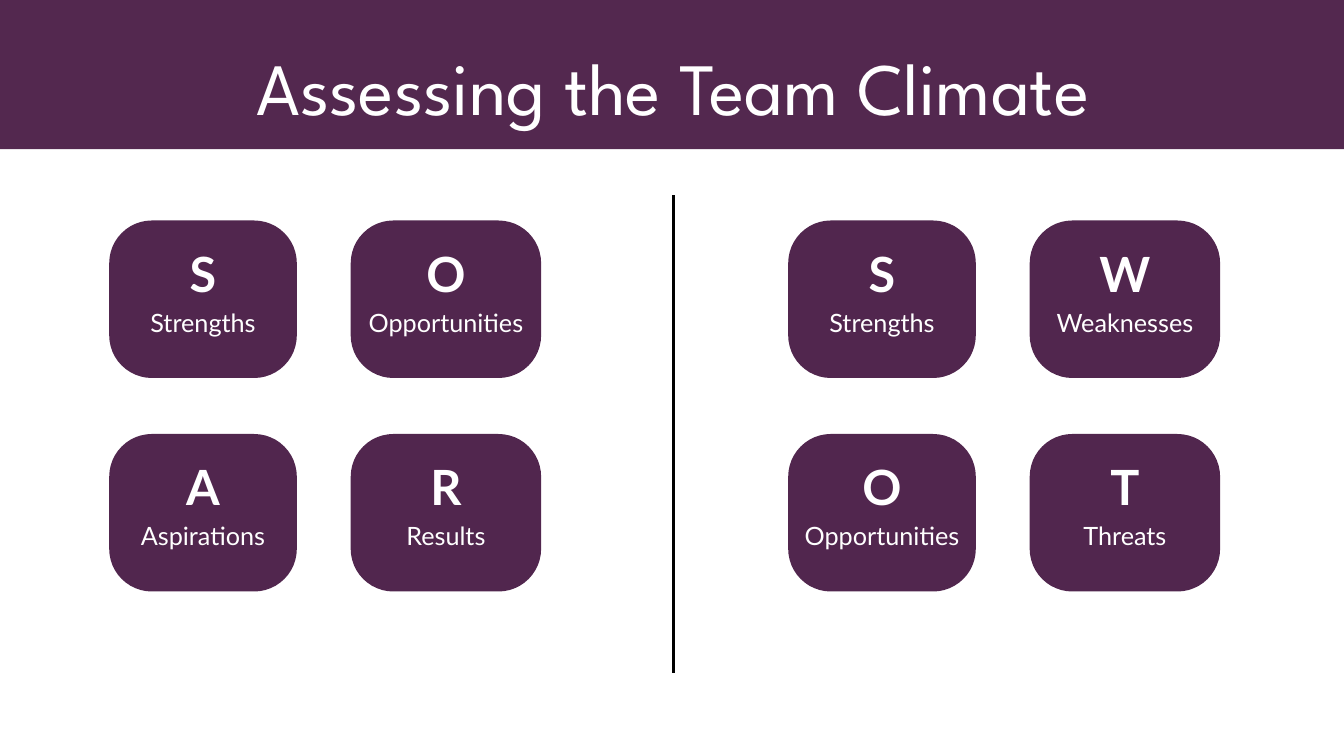
from itertools import product

from lxml.etree import SubElement
from pptx import Presentation
from pptx.dml.color import RGBColor
from pptx.enum.shapes import MSO_CONNECTOR, MSO_SHAPE
from pptx.enum.text import MSO_ANCHOR, PP_ALIGN
from pptx.oxml.ns import qn
from pptx.util import Pt

EMU_PER_PX = 9525
BAND_PURPLE = RGBColor(0x53, 0x28, 0x4F)
CARD_PURPLE = RGBColor(0x51, 0x26, 0x4E)
WHITE = RGBColor(0xFF, 0xFF, 0xFF)
BLACK = RGBColor(0x00, 0x00, 0x00)

TITLE = {"name": "League Spartan", "size": Pt(79), "bold": False}
LETTER = {"name": "Lato", "size": Pt(52), "bold": True}
LABEL = {"name": "Lato", "size": Pt(27), "bold": False}

MODEL_LEFTS = (156, 1126)
COLUMNS = ((0, 268), (345, 272))  # offset from the model's left, width
ROW_TOPS = (315, 620)
CARD_HEIGHT = 225
CORNER_RADIUS = 61
MODELS = (
    ("Strengths", "Opportunities", "Aspirations", "Results"),
    ("Strengths", "Weaknesses", "Opportunities", "Threats"),
)


def px(*lengths):
    return [length * EMU_PER_PX for length in lengths]


class ClimateSlide:
    """Holds the current slide and draws its elements in one style."""

    def __init__(self, slide):
        self.slide = slide

    def block(self, preset, box, colour):
        block = self.slide.shapes.add_shape(preset, *px(*box))
        block.shadow.inherit = False
        block.fill.solid()
        block.fill.fore_color.rgb = colour
        block.line.fill.background()
        return block

    def fill_text(self, frame, lines, frame_format):
        """Fill a text frame with (text, font format, line height in points)."""
        margins = {f"margin_{side}": 0 for side in ("left", "top", "right", "bottom")}
        for key, value in {**margins, **frame_format}.items():
            setattr(frame, key, value)
        for index, (text, font_format, line_height) in enumerate(lines):
            paragraph = frame.add_paragraph() if index else frame.paragraphs[0]
            paragraph.alignment = PP_ALIGN.CENTER
            paragraph.line_spacing = Pt(line_height)
            run = paragraph.add_run()
            run.text = text
            for key, value in font_format.items():
                setattr(run.font, key, value)
            run.font.color.rgb = WHITE

    def title(self, text, box):
        heading = self.slide.shapes.add_textbox(*px(*box))
        self.fill_text(heading.text_frame, [(text, TITLE, 94.8)], {"word_wrap": True})

    def card(self, label, box):
        card = self.block(MSO_SHAPE.ROUNDED_RECTANGLE, box, CARD_PURPLE)
        card.adjustments[0] = CORNER_RADIUS / CARD_HEIGHT
        lines = [(label[0], LETTER, 72.8), (label, LABEL, 37.8)]
        [raised] = px(39)
        self.fill_text(card.text_frame, lines, {
            "margin_bottom": raised,
            "vertical_anchor": MSO_ANCHOR.MIDDLE,
            "word_wrap": False,
        })

    def divider(self, x, top, bottom):
        divider = self.slide.shapes.add_connector(
            MSO_CONNECTOR.STRAIGHT, *px(x, bottom, x, top))
        divider.line.color.rgb = BLACK
        divider.line.width = Pt(3)
        SubElement(divider._element.spPr, qn("a:effectLst"))


def main():
    presentation = Presentation()
    presentation.slide_width, presentation.slide_height = px(1920, 1080)
    blank = presentation.slide_layouts[6]
    climate = ClimateSlide(presentation.slides.add_slide(blank))

    climate.block(MSO_SHAPE.RECTANGLE, (-17, 0, 1955, 213), BAND_PURPLE)
    climate.title("Assessing the Team Climate", (84, 59, 1754, 125))
    for model_left, labels in zip(MODEL_LEFTS, MODELS):
        for label, (top, (offset, width)) in zip(labels, product(ROW_TOPS, COLUMNS)):
            climate.card(label, (model_left + offset, top, width, CARD_HEIGHT))
    climate.divider(962, 279, 961)

    presentation.save("out.pptx")


if __name__ == "__main__":
    main()
